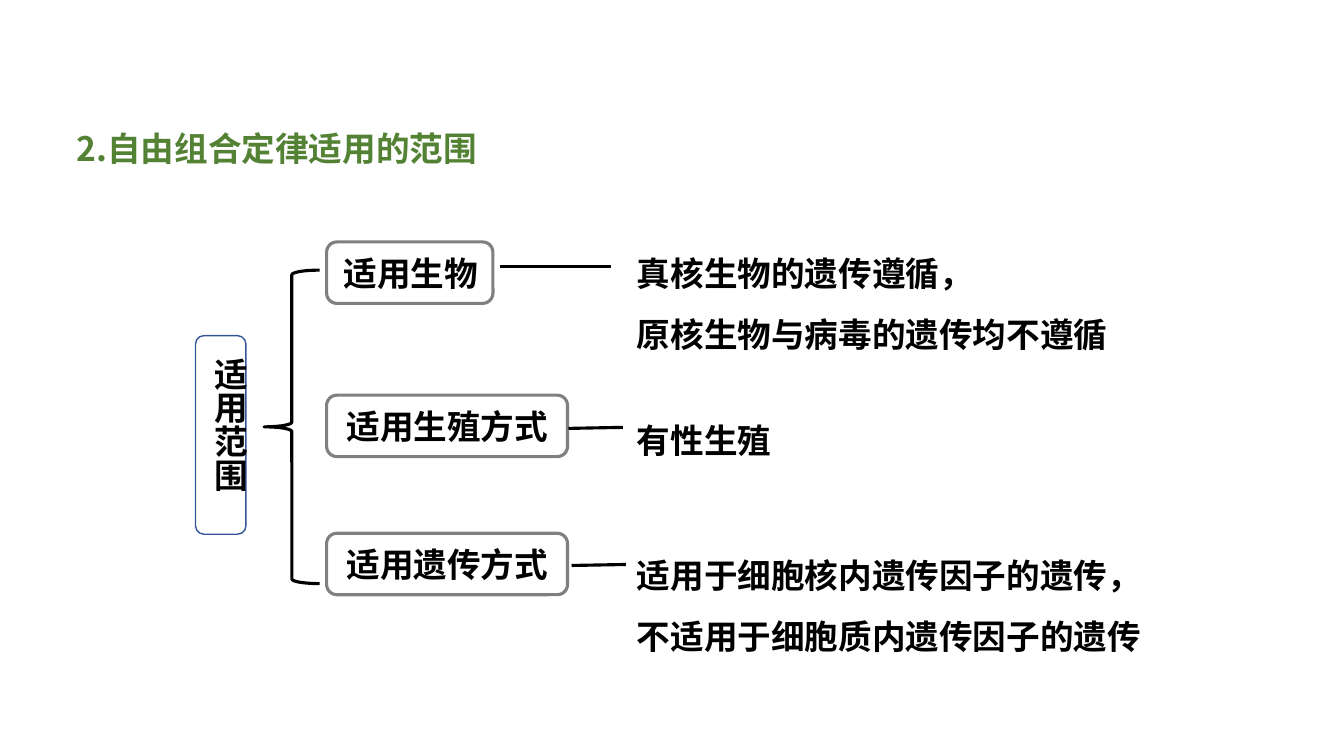
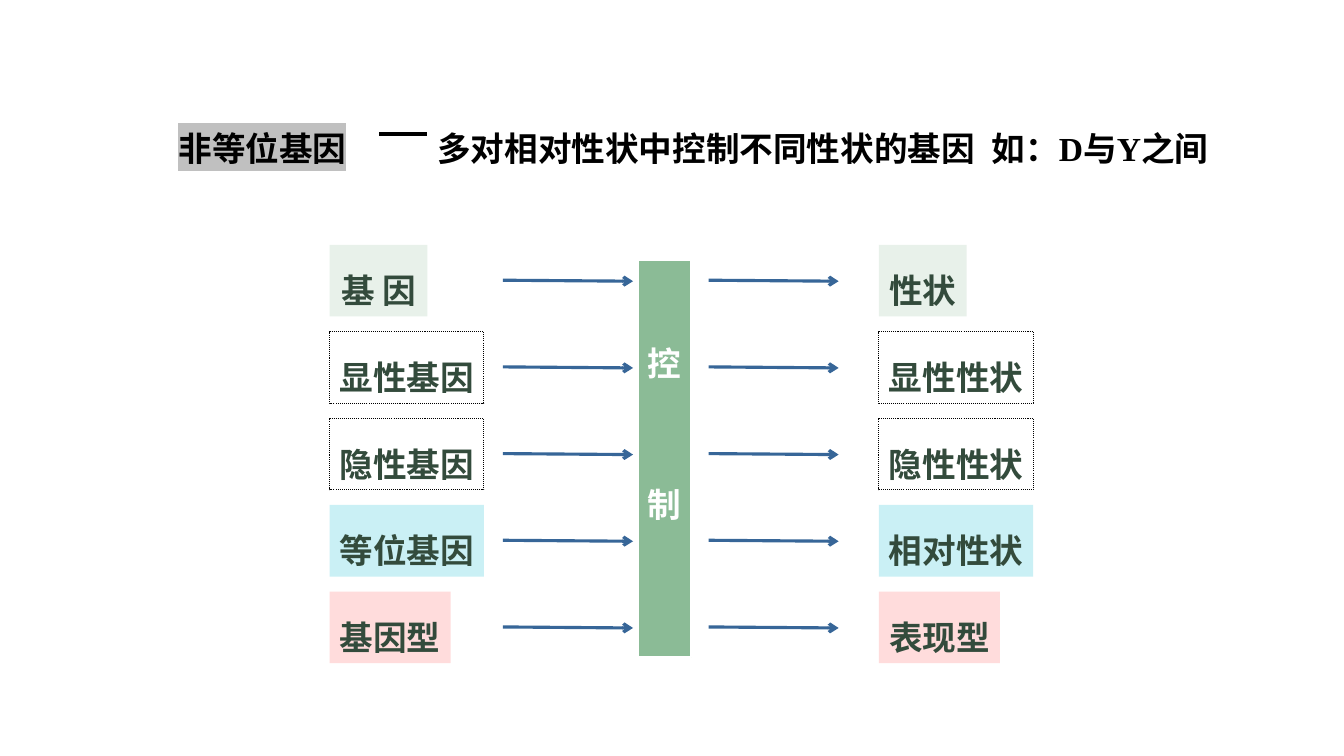
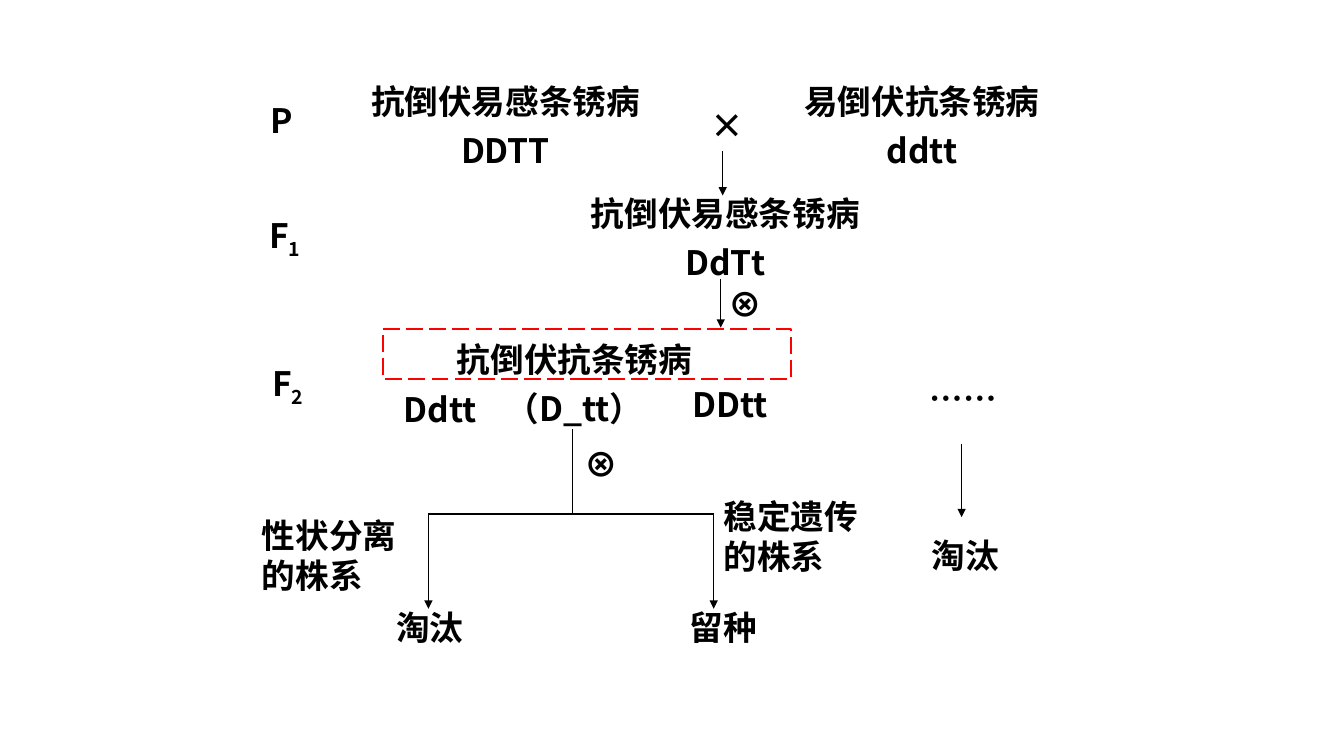
from pptx import Presentation
from pptx import util as u
from pptx.dml.color import RGBColor
from pptx.enum import dml, shapes, text
from pptx.oxml import ns
from lxml import etree

CELL = u.Inches(0.1)
COLUMNS, ROWS = 133.33, 75
TITLE_ONLY, BLANK = 5, 6
FONT, SERIF = "Noto Sans CJK SC", "Times New Roman"
SIZE = u.Pt(24)
EXACT = u.Pt(35)

BLACK = RGBColor(0x00, 0x00, 0x00)
WHITE = RGBColor(0xFF, 0xFF, 0xFF)
GREY = RGBColor(0x80, 0x80, 0x80)
SILVER = RGBColor(0xC0, 0xC0, 0xC0)
RED = RGBColor(0xFF, 0x00, 0x00)
GREEN = RGBColor(0x54, 0x82, 0x35)
NAVY = RGBColor(0x35, 0x56, 0x96)
ARROW_BLUE = RGBColor(0x37, 0x66, 0x98)
SAGE = RGBColor(0x8B, 0xBB, 0x96)
MINT = RGBColor(0xE8, 0xF1, 0xEA)
AQUA = RGBColor(0xCA, 0xF0, 0xF5)
PINK = RGBColor(0xFF, 0xDC, 0xDC)
FOREST = RGBColor(0x33, 0x4B, 0x3C)

LEFT, CENTER = text.PP_ALIGN.LEFT, text.PP_ALIGN.CENTER
KIND = shapes.MSO_SHAPE
DASH = dml.MSO_LINE


def cells(*values):
    return [round(value * CELL) for value in values]


class Deck:
    def __init__(self):
        self.presentation = Presentation()
        self.presentation.slide_width, self.presentation.slide_height = cells(COLUMNS, ROWS)
        self.slide = None

    def new_slide(self, layout):
        self.slide = self.presentation.slides.add_slide(self.presentation.slide_layouts[layout])

    def add_lines(self, shape, lines, color=BLACK, align=LEFT, spacing=1.0,
                  font=FONT, highlight=None, subscript="", gap=0):
        frame = shape.text_frame
        frame.word_wrap = True
        frame.auto_size = text.MSO_AUTO_SIZE.NONE
        frame.vertical_anchor = text.MSO_ANCHOR.TOP
        frame.margin_left = CELL if align == LEFT else 0
        frame.margin_right = 0
        for index, line in enumerate(lines):
            paragraph = frame.add_paragraph() if index else frame.paragraphs[0]
            paragraph.alignment = align
            paragraph.line_spacing = spacing
            paragraph.space_before = u.Pt(gap if index else 0)
            self.add_run(paragraph, line, color, font, highlight)
            if subscript:
                run = self.add_run(paragraph, subscript, color, font)
                run.font._element.set("baseline", "-25000")
        return frame

    def add_run(self, paragraph, words, color, font, highlight=None):
        run = paragraph.add_run()
        run.text = words
        run.font.size, run.font.bold, run.font.name = SIZE, True, font
        run.font.color.rgb = color
        properties = run.font._element
        properties.set("lang", "zh-CN")
        latin = properties.find(ns.qn("a:latin"))
        east_asian = etree.SubElement(properties, ns.qn("a:ea"))
        east_asian.set("typeface", FONT)
        if highlight is not None:
            mark = etree.Element(ns.qn("a:highlight"))
            etree.SubElement(mark, ns.qn("a:srgbClr")).set("val", str(highlight))
            latin.addprevious(mark)
        return run

    def title(self, x, y, width, height, words, **style):
        shape = self.slide.shapes.title
        shape.left, shape.top, shape.width, shape.height = cells(x, y, width, height)
        self.add_lines(shape, [words], spacing=1.5, **style)

    def label(self, x, y, width, height, *lines, **style):
        shape = self.slide.shapes.add_textbox(*cells(x, y, width, height))
        return self.add_lines(shape, lines, **style)

    def box(self, kind, x, y, width, height, fill=None, line=None, weight=1, dash=None):
        shape = self.slide.shapes.add_shape(kind, *cells(x, y, width, height))
        shape.shadow.inherit = False
        if fill is None:
            shape.fill.background()
        else:
            shape.fill.solid()
            shape.fill.fore_color.rgb = fill
        if line is None:
            shape.line.fill.background()
        else:
            shape.line.color.rgb = line
            shape.line.width = u.Pt(weight)
            if dash:
                shape.line.dash_style = dash
        return shape

    def line(self, x1, y1, x2, y2, color=BLACK, weight=2.25, head=None):
        connector = self.slide.shapes.add_connector(
            shapes.MSO_CONNECTOR.STRAIGHT, *cells(x1, y1, x2, y2))
        connector.line.color.rgb = color
        connector.line.width = u.Pt(weight)
        properties = connector._element.spPr
        if head:
            outline = properties.find(ns.qn("a:ln"))
            etree.SubElement(outline, ns.qn("a:tailEnd")).set("type", head)
        etree.SubElement(properties, ns.qn("a:effectLst"))


def build_scope(deck):
    deck.new_slide(TITLE_ONLY)
    deck.title(6.6, 10.2, 52.8, 7.1, "2.自由组合定律适用的范围", color=GREEN)
    deck.box(KIND.ROUNDED_RECTANGLE, 19.4, 33.3, 5, 19.7, line=NAVY)
    frame = deck.label(19.3, 34.5, 6, 16.9, "适用范围")
    frame.margin_right = CELL
    frame._txBody.bodyPr.set("vert", "eaVert")
    deck.box(KIND.LEFT_BRACE, 26.2, 26.8, 5.5, 31.1, line=BLACK, weight=2.25)
    for y, width, indent, words in (
            (24, 16.5, 0.7, "适用生物"),
            (39.2, 23.9, 1, "适用生殖方式"),
            (52.9, 23.9, 1, "适用遗传方式")):
        deck.box(KIND.ROUNDED_RECTANGLE, 32.4, y, width, 6.1, line=GREY, weight=2.25)
        deck.label(32.4 + indent, y + 0.6, width + 2.5, 5, words)
    for ends in ((49.6, 26.4, 60.6, 26.4), (56.4, 42.5, 61.8, 42.4), (56.7, 56.1, 62.1, 56)):
        deck.line(*ends)
    for y, width, height, lines in (
            (22.6, 54.2, 13.1, ("真核生物的遗传遵循，", "原核生物与病毒的遗传均不遵循")),
            (39.2, 17.5, 7.1, ("有性生殖",)),
            (52.6, 52.7, 13.1, ("适用于细胞核内遗传因子的遗传，不适用于细胞质内遗传因子的遗传",))):
        deck.label(62.2, y, width, height, *lines, spacing=1.5)


def build_genes(deck):
    deck.new_slide(TITLE_ONLY)
    deck.title(16.7, 10.2, 18.7, 7.1, "非等位基因", highlight=SILVER)
    deck.line(37.6, 13.3, 42.4, 13.3)
    deck.label(42.4, 10.2, 55.3, 7.1, "多对相对性状中控制不同性状的基因", spacing=1.5)
    deck.label(97.4, 10.2, 23.5, 7.1, "如：D与Y之间", spacing=1.5, font=SERIF)
    bar = deck.box(KIND.RECTANGLE, 63.3, 25.8, 5.3, 39.4, SAGE, WHITE, 1.5)
    frame = deck.add_lines(bar, ("控", "制"), color=WHITE, align=CENTER, spacing=1.5, gap=58)
    frame.margin_top = u.Inches(0.62)
    pairs = (
        ("基 因", 9.7, "性状", 8.7, MINT),
        ("显性基因", 15.3, "显性性状", 15.3, None),
        ("隐性基因", 15.3, "隐性性状", 15.3, None),
        ("等位基因", 15.3, "相对性状", 15.3, AQUA),
        ("基因型", 12, "表现型", 12, PINK))
    for row, (gene, gene_width, trait, trait_width, fill) in enumerate(pairs):
        y = 24.3 + 8.6 * row
        outline = BLACK if fill is None else None
        for x, width, words in ((32.7, gene_width, gene), (87.2, trait_width, trait)):
            shape = deck.box(KIND.RECTANGLE, x, y, width, 7.1, fill, outline, 0.75,
                             DASH.ROUND_DOT if outline is not None else None)
            deck.add_lines(shape, [words], color=FOREST, align=CENTER, spacing=1.5)
        for x in (49.9, 70.3):
            deck.line(x, y + 3.5, x + 12.9, y + 3.6, ARROW_BLUE, head="arrow")


def build_cross(deck):
    deck.new_slide(BLANK)
    deck.box(KIND.RECTANGLE, 38, 32.6, 40.5, 5, line=RED, weight=1.5, dash=DASH.LONG_DASH)
    for x, y, width, height, *lines in (
            (35.8, 6.7, 28.7, 10.8, "抗倒伏易感条锈病", "DDTT"),
            (78.8, 6.7, 25.3, 10.8, "易倒伏抗条锈病", "ddtt"),
            (57.6, 17.8, 28.7, 10.8, "抗倒伏易感条锈病", "DdTt"),
            (41, 32.3, 32, 10.8, "抗倒伏抗条锈病（D_tt）"),
            (38.9, 37.2, 9.6, 5.9, "Ddtt"),
            (67.4, 36.7, 10, 5.9, "DDtt"),
            (84.7, 36.1, 21.7, 10.8, "……")):
        deck.label(x, y, width, height, *lines, align=CENTER, spacing=EXACT)
    for x, y, words in ((91.4, 52.6, "淘汰"), (38.3, 59.7, "淘汰"), (67.4, 59.7, "留种")):
        deck.label(x, y, 8.7, 5, words, align=CENTER)
    for x, y, width, words, number in (
            (25.8, 9.4, 4.2, "P", ""),
            (24.4, 20.8, 7.7, "F", "1"),
            (24.7, 35.5, 7.7, "F", "2")):
        deck.label(x, y, width, 5, words, align=CENTER, subscript=number)
    for x, y, width, symbol in ((69.5, 9.9, 4.5, "×"), (71.3, 27.7, 7.8, "⊗"), (57, 43.5, 5.2, "⊗")):
        deck.label(x, y, width, 5, symbol)
    for x, y, width, words in ((70.8, 48.7, 15.3, "稳定遗传"), (25, 50.6, 17.8, "性状分离")):
        deck.label(x, y, width, 9.1, words, "的株系")
    for x, top, bottom in (
            (71.7, 15, 19.4), (71.5, 27.7, 32.5), (95.4, 44, 51.3),
            (42.5, 51, 60.4), (70.8, 51, 60.4)):
        deck.line(x, top, x, bottom, weight=1, head="triangle")
    deck.line(56.8, 42.6, 56.8, 51, weight=1)
    deck.line(42.5, 51, 70.8, 51, weight=1)


def main():
    deck = Deck()
    for build in (build_scope, build_genes, build_cross):
        build(deck)
    deck.presentation.save("out.pptx")


if __name__ == "__main__":
    main()
